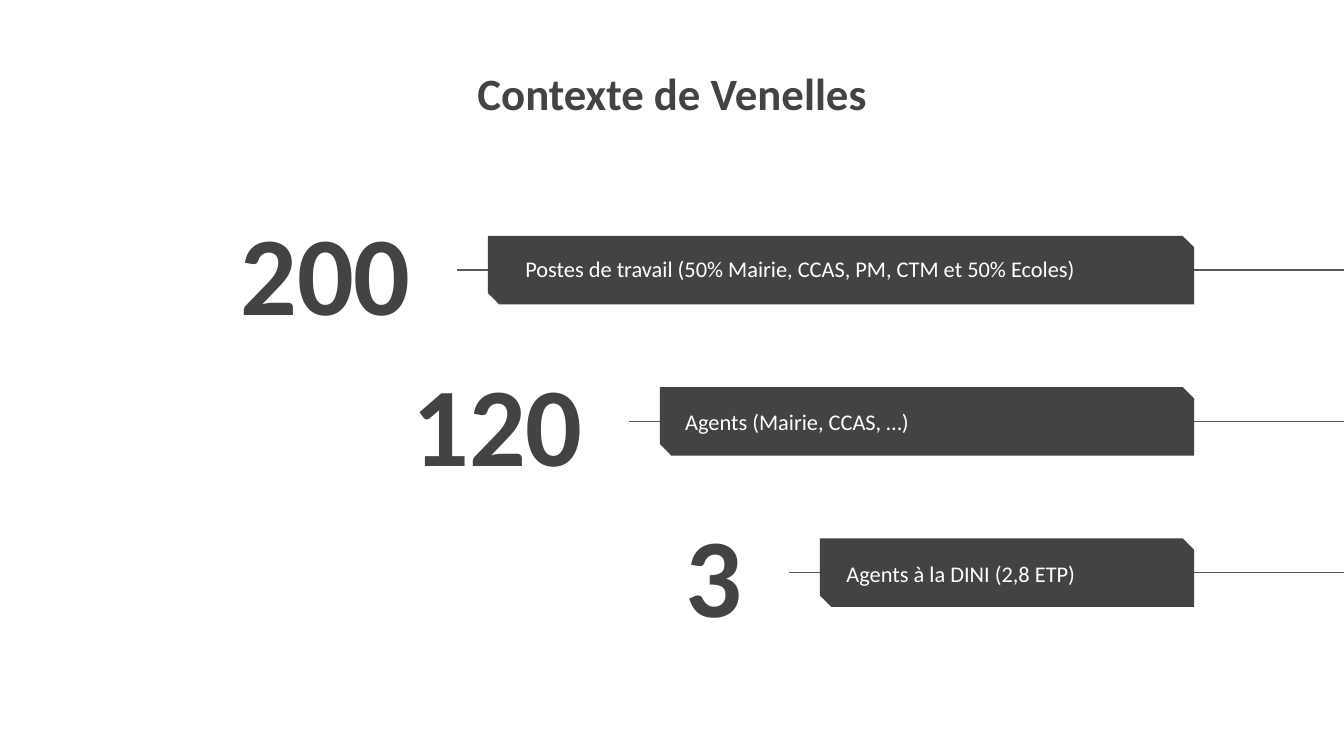
import pptx
import pptx.dml.color
import pptx.enum.shapes
import pptx.enum.text
import pptx.oxml.ns
import pptx.util
import lxml.etree

PX = 4572  # 200 px to the inch
PAGE_WIDTH, PAGE_HEIGHT = 2000, 1125
DARK, RULE, WHITE = "434343", "595959", "FFFFFF"
ALIGN = pptx.enum.text.PP_ALIGN
ANCHOR = pptx.enum.text.MSO_ANCHOR

BAR_RIGHT, BAR_HEIGHT = 1777, 102
FIRST_TOP, ROW_STEP = 351, 225
# Number, label, left edge of the bar, label inset from that edge, label anchor
ROWS = [
    ("200", "Postes de travail (50% Mairie, CCAS, PM, CTM et 50% Ecoles)", 726, 36, ANCHOR.MIDDLE),
    ("120", "Agents (Mairie, CCAS, …)", 982, 18, ANCHOR.TOP),
    ("3", "Agents à la DINI (2,8 ETP)", 1220, 20, ANCHOR.TOP),
]


def px(*lengths):
    return [pptx.util.Emu(length * PX) for length in lengths]


def color(hex_string):
    return pptx.dml.color.RGBColor.from_string(hex_string)


def write(box, text, size, hex_string, bold, align, anchor):
    frame = box.text_frame
    frame.text = text
    frame.word_wrap = True
    frame.auto_size = pptx.enum.text.MSO_AUTO_SIZE.NONE
    frame.vertical_anchor = anchor
    frame.margin_left, frame.margin_top, frame.margin_right, frame.margin_bottom = px(20, 20, 20, 20)
    para = frame.paragraphs[0]
    para.alignment = align
    for span in para.runs:
        span.font.name = "Calibri"
        span.font.size = pptx.util.Pt(size)
        span.font.bold = bold
        span.font.color.rgb = color(hex_string)


def add_title(page, left, top, width, height):
    title = page.shapes.title
    title.left, title.top, title.width, title.height = px(left, top, width, height)
    write(title, "Contexte de Venelles", 24, DARK, True, ALIGN.CENTER, ANCHOR.TOP)


def add_row(page, number, label, label_inset, label_anchor, left, top, width, height):
    # Rule running behind the bar to the page edge
    middle = top + height // 2
    rule = page.shapes.add_connector(
        pptx.enum.shapes.MSO_CONNECTOR.STRAIGHT, *px(PAGE_WIDTH, middle, left - 46, middle))
    rule.line.color.rgb = color(RULE)
    rule.line.width = pptx.util.Pt(0.75)
    lxml.etree.SubElement(rule._element.spPr, pptx.oxml.ns.qn("a:effectLst"))

    # Bar with two snipped corners
    bar = page.shapes.add_shape(
        pptx.enum.shapes.MSO_SHAPE.SNIP_2_DIAG_RECTANGLE, *px(left, top, width, height))
    bar.adjustments[0] = 0
    bar.adjustments[1] = 0.167
    bar.shadow.inherit = False
    bar.fill.solid()
    bar.fill.fore_color.rgb = color(DARK)
    bar.line.fill.background()

    # Large number left of the bar, label on it
    number_box = page.shapes.add_textbox(*px(left - 487, top - 31, 392, 166))
    write(number_box, number, 60, DARK, True, ALIGN.RIGHT, ANCHOR.MIDDLE)
    label_box = page.shapes.add_textbox(
        *px(left + label_inset, top + 12, width - label_inset - 20, 74))
    write(label_box, label, 12, WHITE, False, ALIGN.LEFT, label_anchor)


def main():
    deck = pptx.Presentation()
    deck.slide_width, deck.slide_height = px(PAGE_WIDTH, PAGE_HEIGHT)
    page = deck.slides.add_slide(deck.slide_layouts.get_by_name("Title Only"))
    add_title(page, 430, 78, 1140, 206)
    for index, (number, label, left, label_inset, label_anchor) in enumerate(ROWS):
        add_row(page, number, label, label_inset, label_anchor, left,
                FIRST_TOP + index * ROW_STEP, BAR_RIGHT - left, BAR_HEIGHT)
    deck.save("out.pptx")


if __name__ == "__main__":
    main()
